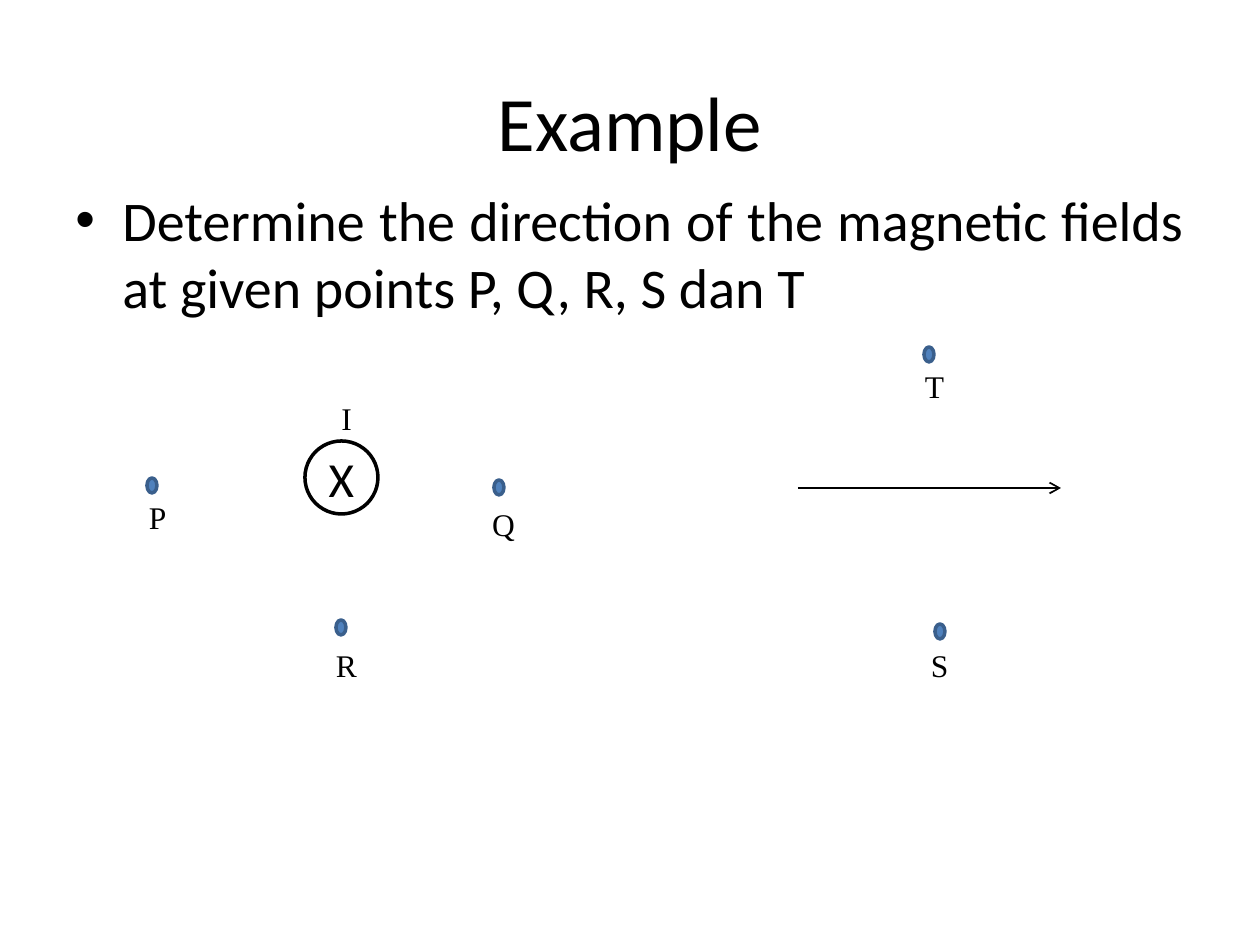
import pptx
import pptx.util
import pptx.dml.color
import pptx.enum.shapes
import pptx.enum.text
import pptx.oxml.ns
import lxml.etree

PX = 914400 / 126
RGB = pptx.dml.color.RGBColor.from_string
Pt = pptx.util.Pt
SHAPE = pptx.enum.shapes.MSO_SHAPE
ALIGN = pptx.enum.text.PP_ALIGN
ANCHOR = pptx.enum.text.MSO_ANCHOR
qn = pptx.oxml.ns.qn
THEME = {
    "ink": RGB("000000"), "dot": RGB("4F81BD"), "dot_line": RGB("3A5F8C"),
    "font": "Calibri", "label_font": "Times New Roman",
    "title": Pt(44), "body": Pt(32), "cross": Pt(28), "label": Pt(18),
    "outline": Pt(2), "arrow": Pt(1),
}


def emu(*lengths):
    return [round(v * PX) for v in lengths]


def write(sp, text, size, font=THEME["font"], align=ALIGN.CENTER, anchor=ANCHOR.MIDDLE):
    tf = sp.text_frame
    tf.word_wrap = True
    tf.vertical_anchor = anchor
    p = tf.paragraphs[0]
    p.text = text
    p.alignment = align
    p.font.size = size
    p.font.name = font
    p.font.color.rgb = THEME["ink"]
    return p


prs = pptx.Presentation()
prs.slide_width, prs.slide_height = emu(1260, 945)
s = prs.slides.add_slide(prs.slide_layouts[6])

write(s.shapes.add_textbox(*emu(63, 42, 1134, 157)), "Example", THEME["title"])

sp = s.shapes.add_textbox(*emu(63, 179, 1134, 665))
p = write(sp, "Determine the direction of the magnetic fields at given points P, Q, R, S dan T",
          THEME["body"], align=ALIGN.JUSTIFY, anchor=ANCHOR.TOP)
pPr = p._p.get_or_add_pPr()
indent = emu(47)[0]
pPr.set("marL", str(indent))
pPr.set("indent", str(-indent))
bullet_font = lxml.etree.Element(qn("a:buFont"), typeface="Arial")
bullet = lxml.etree.Element(qn("a:buChar"), char="•")
pPr.insert(0, bullet_font)
pPr.insert(1, bullet)

sp = s.shapes.add_shape(SHAPE.OVAL, *emu(305, 441, 73, 73))
sp.shadow.inherit = False
sp.fill.background()
sp.line.color.rgb = THEME["ink"]
sp.line.width = THEME["outline"]
write(sp, "X", THEME["cross"])

for x, y in [(147, 478), (494, 480), (336, 620), (924, 347), (935, 624)]:
    sp = s.shapes.add_shape(SHAPE.OVAL, *emu(x, y, 10, 15))
    sp.shadow.inherit = False
    sp.fill.solid()
    sp.fill.fore_color.rgb = THEME["dot"]
    sp.line.color.rgb = THEME["dot_line"]
    sp.line.width = THEME["outline"]

wire = s.shapes.add_connector(pptx.enum.shapes.MSO_CONNECTOR.STRAIGHT, *emu(798, 488, 1061, 488))
wire.line.color.rgb = THEME["ink"]
wire.line.width = THEME["arrow"]
lxml.etree.SubElement(wire.line._get_or_add_ln(), qn("a:tailEnd"), type="arrow")
lxml.etree.SubElement(wire._element.spPr, qn("a:effectLst"))

for text, x, y in [("I", 294, 368), ("P", 105, 467), ("Q", 451, 474),
                   ("R", 294, 615), ("S", 887, 615), ("T", 882, 336)]:
    sp = s.shapes.add_shape(SHAPE.DOUBLE_BRACKET, *emu(x, y, 105, 100))
    sp.shadow.inherit = False
    sp.fill.background()
    sp.line.fill.background()
    write(sp, text, THEME["label"], THEME["label_font"])

prs.save("out.pptx")
